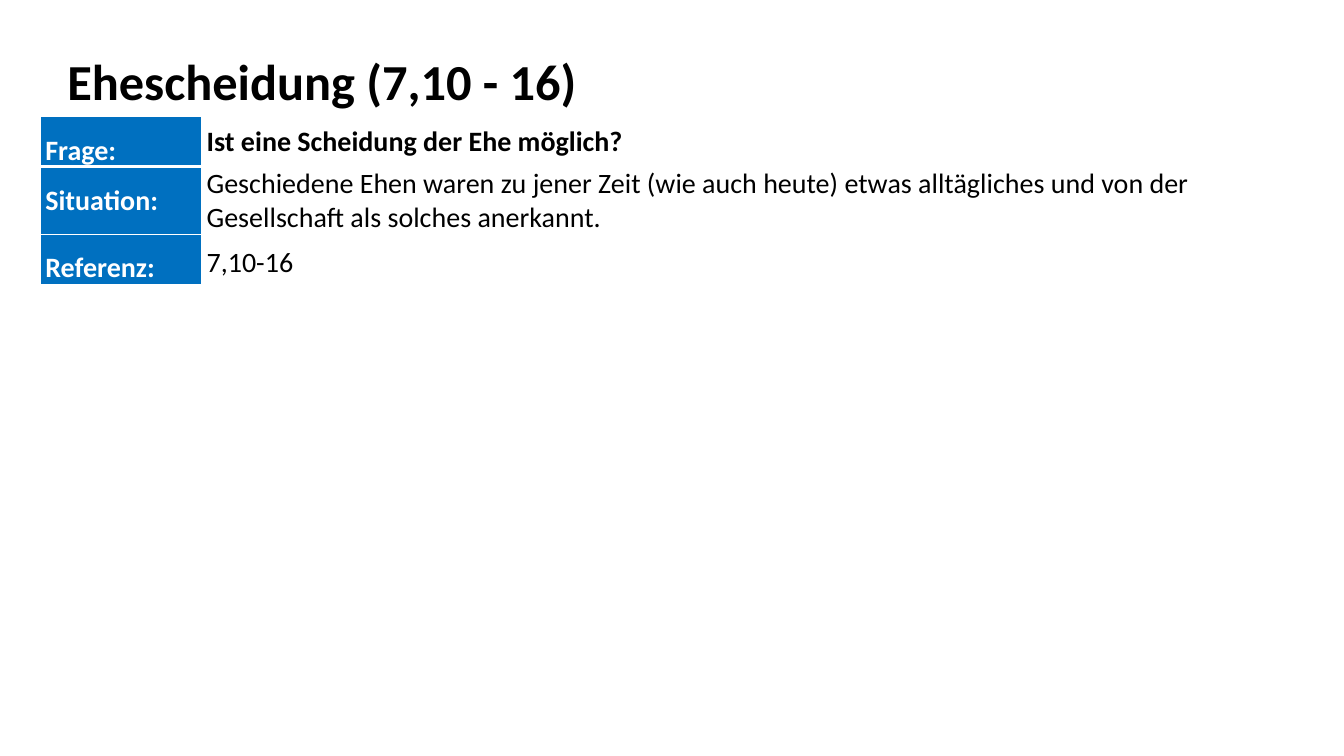
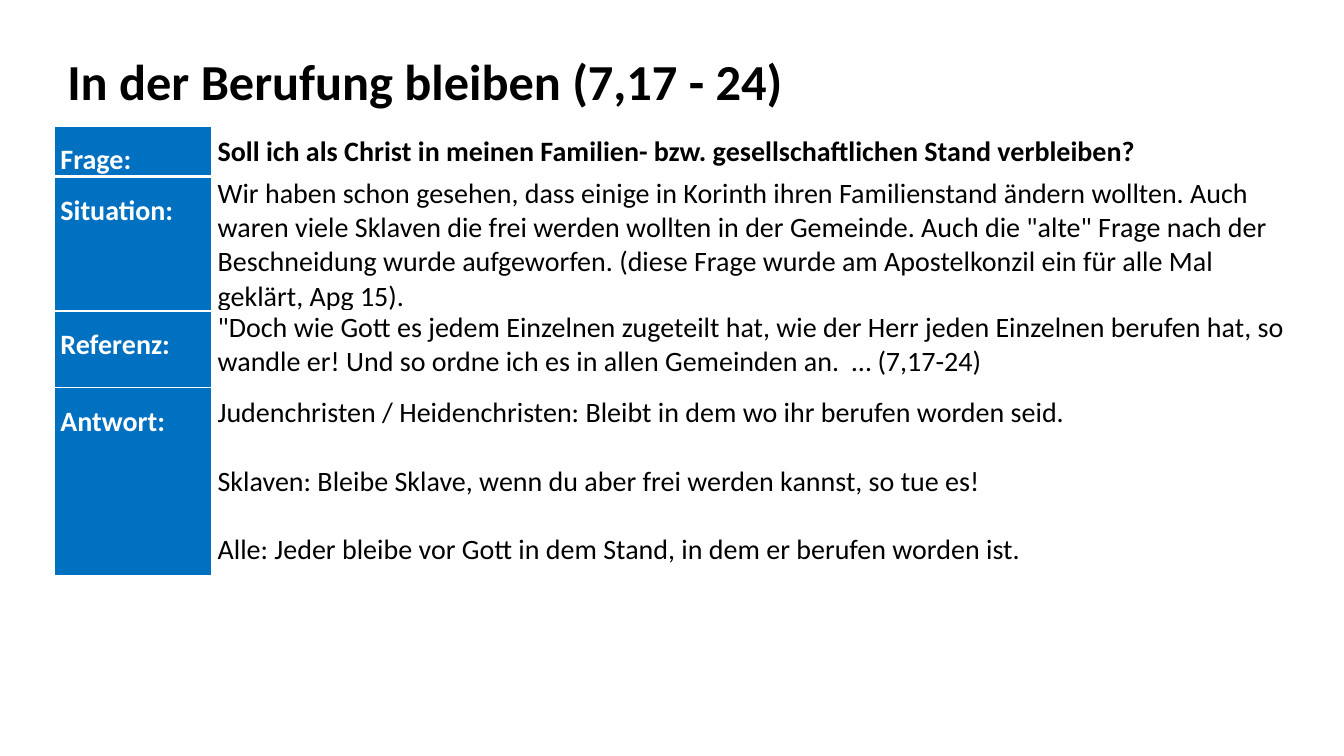
from pptx import Presentation
from pptx.dml.color import RGBColor as Rgb
from pptx.enum.text import MSO_AUTO_SIZE as Auto
from pptx.oxml import parse_xml
from pptx.oxml.ns import nsdecls
from pptx.util import Pt

COLORS = {"blue": "0070C0", "white": "FFFFFF", "black": "000000"}
FONT = "Calibri"
BODY = 20
LINE = 24.4


def style(par, size, color, bold):
    for run in par.runs:
        font = run.font
        font.name, font.size, font.bold = FONT, Pt(size), bold
        font.color.rgb = Rgb.from_string(COLORS[color])


def add_title(slide, text, width):
    box = slide.shapes.add_textbox(Pt(41), Pt(32.4), Pt(width), Pt(51))
    frame = box.text_frame
    frame.text = text
    frame.word_wrap = False
    frame.auto_size = Auto.SHAPE_TO_FIT_TEXT
    style(frame.paragraphs[0], 36, "black", True)


def add_edges(cell, bottom):
    props = cell._tc.get_or_add_tcPr()
    for side, width in (("L", 1), ("R", 1), ("T", 1), ("B", bottom)):
        props.append(parse_xml(
            f'<a:ln{side} {nsdecls("a")} w="{Pt(width)}"><a:solidFill>'
            f'<a:srgbClr val="{COLORS["white"]}"/></a:solidFill></a:ln{side}>'))


def fill_cell(cell, texts, inset, top, fill, color, bold, bottom, space):
    add_edges(cell, bottom)
    cell.fill.solid()
    cell.fill.fore_color.rgb = Rgb.from_string(COLORS[fill])
    cell.margin_left = cell.margin_right = Pt(inset)
    cell.margin_top, cell.margin_bottom = Pt(top), 0
    frame = cell.text_frame
    frame.text = "\n".join(texts)
    for i, par in enumerate(frame.paragraphs):
        par.line_spacing = space
        if i:
            par.space_before = Pt(LINE)
        style(par, BODY, color, bold)


def add_grid(slide, box, label, inset, rows):
    left, top, width = box
    high = sum(row[0] for row in rows)
    shape = slide.shapes.add_table(
        len(rows), 2, Pt(left), Pt(top), Pt(width), Pt(high))
    table = shape.table
    table.first_row = table.horz_banding = False
    table.columns[0].width = Pt(label)
    table.columns[1].width = Pt(width - label)
    for i, (height, gap, name, *texts) in enumerate(rows):
        table.rows[i].height = Pt(height)
        head = i == 0
        bottom = 3 if head else 1
        fill_cell(table.cell(i, 0), [name], inset, 0,
                  "blue", "white", True, bottom, 1.5)
        fill_cell(table.cell(i, 1), texts, inset, gap,
                  "white", "black", head, bottom, 1.0)


def add_topic(deck, title, wide, box, label, inset, rows):
    slide = deck.slides.add_slide(deck.slide_layouts[6])
    add_title(slide, title, wide)
    add_grid(slide, box, label, inset, rows)


DIVORCE = [
    (32.4, 6, "Frage:", "Ist eine Scheidung der Ehe möglich?"),
    (48.2, 0, "Situation:",
     "Geschiedene Ehen waren zu jener Zeit (wie auch heute) etwas "
     "alltägliches und von der Gesellschaft als solches anerkannt."),
    (35.3, 8.5, "Referenz:", "7,10-16"),
]
CALLING = [
    (34.6, 6, "Frage:",
     "Soll ich als Christ in meinen Familien- bzw. gesellschaftlichen "
     "Stand verbleiben?"),
    (77.8, 0, "Situation:",
     "Wir haben schon gesehen, dass einige in Korinth ihren Familienstand "
     "ändern wollten. Auch waren viele Sklaven die frei werden wollten in "
     'der Gemeinde. Auch die "alte" Frage nach der Beschneidung wurde '
     "aufgeworfen. (diese Frage wurde am Apostelkonzil ein für alle Mal "
     "geklärt, Apg 15)."),
    (54.7, 0, "Referenz:",
     '"Doch wie Gott es jedem Einzelnen zugeteilt hat, wie der Herr jeden '
     "Einzelnen berufen hat, so wandle er! Und so ordne ich es in allen "
     "Gemeinden an.  … (7,17-24)"),
    (134.6, 6, "Antwort:",
     "Judenchristen / Heidenchristen: Bleibt in dem wo ihr berufen worden "
     "seid.",
     "Sklaven: Bleibe Sklave, wenn du aber frei werden kannst, so tue es!",
     "Alle: Jeder bleibe vor Gott in dem Stand, in dem er berufen worden "
     "ist."),
]


def main():
    deck = Presentation()
    deck.slide_width, deck.slide_height = Pt(960), Pt(540)
    add_topic(deck, "Ehescheidung (7,10 - 16)", 382.3,
              (28.8, 83, 908.6), 115.2, 3.6, DIVORCE)
    add_topic(deck, "In der Berufung bleiben (7,17 - 24)", 531.4,
              (38.9, 90, 887), 112.3, 4.3, CALLING)
    deck.save("out.pptx")


if __name__ == "__main__":
    main()
